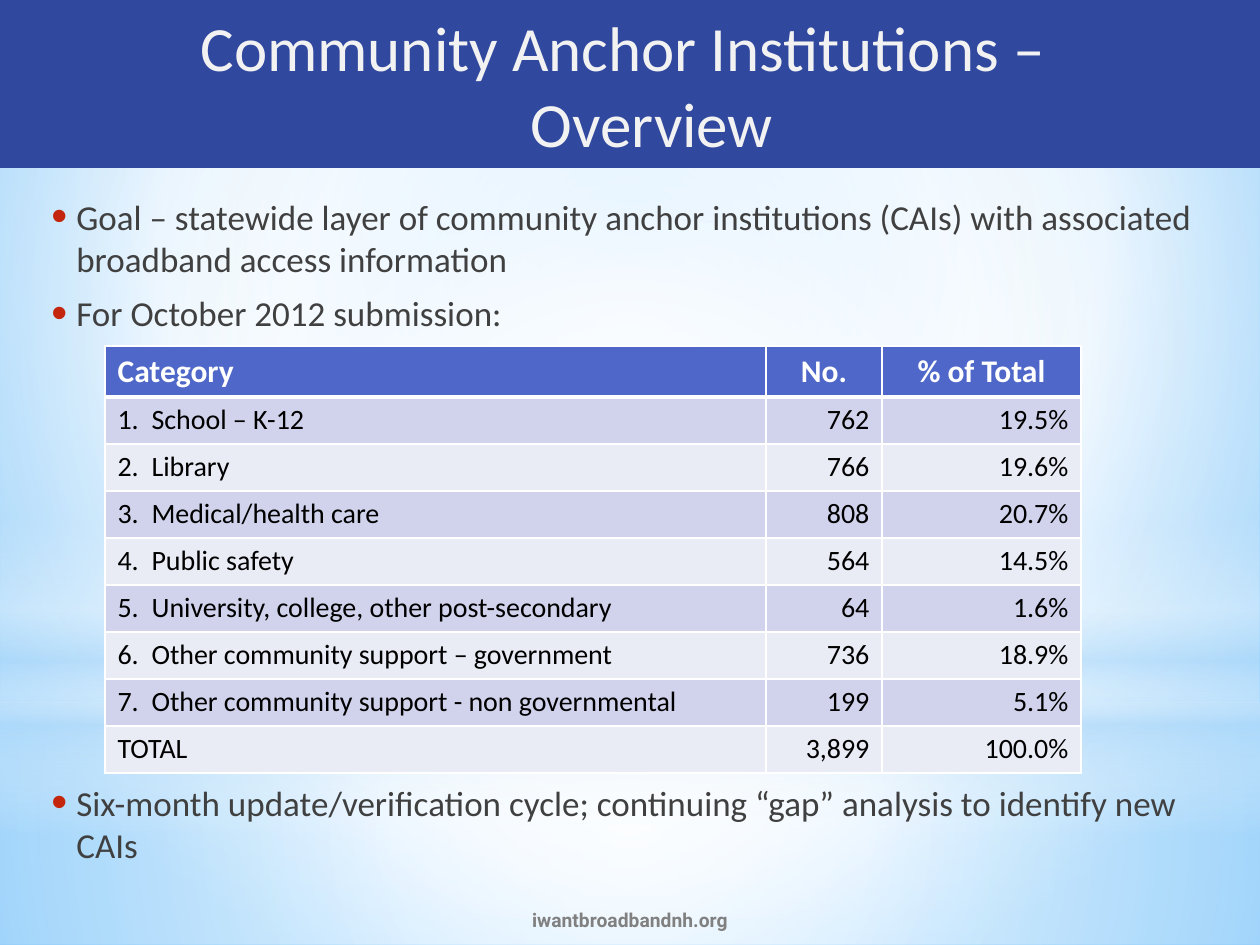
from dataclasses import dataclass

import pptx
import pptx.dml.color
import pptx.enum.shapes
import pptx.enum.text
import pptx.oxml
import pptx.oxml.ns
import pptx.util

ALIGN = pptx.enum.text.PP_ALIGN
ANCHOR = pptx.enum.text.MSO_ANCHOR
SHAPE = pptx.enum.shapes.MSO_SHAPE
PX_PER_INCH = 126
WIDTH, HEIGHT = 1260, 945
HORIZON = 703
CENTER = (50, 50, 50, 50)


@dataclass(frozen=True)
class Theme:
    font: str = "Calibri"
    footer_font: str = "Roboto"
    title_size: int = 36
    body_size: int = 20
    header_size: int = 18
    cell_size: int = 16
    footer_size: int = 11
    banner: str = "31489F"
    title: str = "F2F2F2"
    body: str = "404040"
    bullet: str = "C3260C"
    header: str = "4E67C8"
    odd_row: str = "D0D3EB"
    even_row: str = "E9EBF5"
    cell_text: str = "000000"
    footer: str = "808080"
    white: str = "FFFFFF"
    haze: str = "B4DCFA"
    sky_top: str = "9ED5FF"
    sky_edge: str = "5BB9FF"


THEME = Theme()

CATEGORIES = [
    ("1.\tSchool – K-12", "762", "19.5%"),
    ("2.\tLibrary", "766", "19.6%"),
    ("3.\tMedical/health care", "808", "20.7%"),
    ("4.\tPublic safety", "564", "14.5%"),
    ("5.\tUniversity, college, other post-secondary", "64", "1.6%"),
    ("6.\tOther community support – government", "736", "18.9%"),
    ("7.\tOther community support - non governmental", "199", "5.1%"),
    ("TOTAL", "3,899", "100.0%"),
]


def px(length):
    return pptx.util.Emu(round(length * 914400 / PX_PER_INCH))


def rgb(color):
    return pptx.dml.color.RGBColor.from_string(color)


def element(xml):
    tag, rest = xml.split(" ", 1)
    return pptx.oxml.parse_xml(f"<{tag} {pptx.oxml.ns.nsdecls('a')} {rest}")


def set_gradient(fill, properties, stops, focus=None):
    fill.solid()
    stop_xml = "".join(
        f'<a:gs pos="{position * 1000}"><a:srgbClr val="{color}">'
        f'<a:alpha val="{opacity * 1000}"/></a:srgbClr></a:gs>'
        for position, color, opacity in stops
    )
    if focus:
        sides = " ".join(f'{side}="{value * 1000}"' for side, value in zip("ltrb", focus))
        direction = f'<a:path path="circle"><a:fillToRect {sides}/></a:path>'
    else:
        direction = '<a:lin ang="5400000" scaled="0"/>'
    gradient = element(
        f'<a:gradFill rotWithShape="1"><a:gsLst>{stop_xml}</a:gsLst>{direction}</a:gradFill>'.replace(
            "<a:gradFill", "a:gradFill", 1)
    )
    solid = properties.find(pptx.oxml.ns.qn("a:solidFill"))
    properties.replace(solid, gradient)


def add_panel(slide, kind, box):
    panel = slide.shapes.add_shape(kind, *map(px, box))
    panel.shadow.inherit = False
    panel.line.fill.background()
    return panel


def add_glow(slide, kind, box, stops, focus=None):
    glow = add_panel(slide, kind, box)
    set_gradient(glow.fill, glow.element.spPr, stops, focus)


def write_text(frame, text, *, size, color, font=THEME.font, bold=False, align=ALIGN.LEFT,
               indent=(0, 0), bullet=False, before=0, after=0, new=False):
    paragraph = frame.add_paragraph() if new else frame.paragraphs[0]
    paragraph.text = text
    properties = paragraph._p.get_or_add_pPr()
    properties.set("marL", str(px(indent[0])))
    properties.set("indent", str(px(indent[1])))
    if bullet:
        for xml in (f'a:buClr ><a:srgbClr val="{THEME.bullet}"/></a:buClr>',
                    'a:buSzPct val="130000"/>',
                    'a:buFont typeface="Arial"/>',
                    'a:buChar char="•"/>'):
            properties.append(element(xml))
    paragraph.alignment = align
    paragraph.space_before = pptx.util.Pt(before)
    paragraph.space_after = pptx.util.Pt(after)
    for run in paragraph.runs:
        run.font.name = font
        run.font.size = pptx.util.Pt(size)
        run.font.bold = bold
        run.font.color.rgb = rgb(color)


def add_text_frame(slide, box, anchor=ANCHOR.TOP):
    frame = slide.shapes.add_textbox(*map(px, box)).text_frame
    frame.word_wrap = True
    frame.vertical_anchor = anchor
    return frame


def add_bullets(slide, box, lines):
    frame = add_text_frame(slide, box)
    for index, line in enumerate(lines):
        write_text(frame, line, size=THEME.body_size, color=THEME.body, indent=(32, -25),
                   bullet=True, before=4 if index else 0, after=3, new=index > 0)


def style_cell(cell, fill, bottom_width):
    properties = cell._tc.get_or_add_tcPr()
    for side, width in zip("LRTB", (1, 1, 1, bottom_width)):
        properties.append(element(
            f'a:ln{side} w="{pptx.util.Pt(width)}"><a:solidFill>'
            f'<a:srgbClr val="{THEME.white}"/></a:solidFill></a:ln{side}>'))
    cell.fill.solid()
    cell.fill.fore_color.rgb = rgb(fill)


def add_category_table(slide, left, top, widths, header_height, row_height):
    rows = [("Category", "No.", "% of Total"), *CATEGORIES]
    heights = [header_height] + [row_height] * len(CATEGORIES)
    table = slide.shapes.add_table(len(rows), len(widths), px(left), px(top),
                                   px(sum(widths)), px(sum(heights))).table
    for column, width in zip(table.columns, widths):
        column.width = px(width)
    for r, (values, height) in enumerate(zip(rows, heights)):
        table.rows[r].height = px(height)
        header = r == 0
        fill = THEME.header if header else (THEME.even_row, THEME.odd_row)[r % 2]
        value_align = ALIGN.CENTER if header else ALIGN.RIGHT
        for c, value in enumerate(values):
            cell = table.cell(r, c)
            style_cell(cell, fill, 3 if header else 1)
            write_text(cell.text_frame, value, bold=header,
                       size=THEME.header_size if header else THEME.cell_size,
                       color=THEME.white if header else THEME.cell_text,
                       align=value_align if c else ALIGN.LEFT,
                       indent=(34, -34) if "\t" in value else (0, 0))


def add_backdrop(slide):
    white, haze = THEME.white, THEME.haze
    background = slide.background
    background.fill.solid()
    set_gradient(background.fill, slide.element.cSld.bg.bgPr,
                 [(0, THEME.sky_top, 100), (60, white, 100), (100, THEME.sky_edge, 100)],
                 (20, 10, 20, 60))
    add_glow(slide, SHAPE.RECTANGLE, (0, HORIZON, WIDTH, HEIGHT - HORIZON),
             [(0, white, 91), (37, white, 76), (100, haze, 79)], CENTER)
    add_glow(slide, SHAPE.RECTANGLE, (0, 0, WIDTH, HORIZON),
             [(0, white, 89), (48, white, 62), (100, haze, 79)], CENTER)
    add_glow(slide, SHAPE.RECTANGLE, (0, 519, WIDTH, 315),
             [(0, white, 0), (29, white, 30), (45, haze, 40),
              (55, white, 26), (65, haze, 60), (100, white, 0)])
    add_glow(slide, SHAPE.OVAL, (0, 220, WIDTH, HORIZON),
             [(0, white, 100), (56, white, 0)], CENTER)


def add_title(slide, text):
    banner = add_panel(slide, SHAPE.RECTANGLE, (0, 0, WIDTH, 168))
    banner.fill.solid()
    banner.fill.fore_color.rgb = rgb(THEME.banner)
    banner.text_frame.vertical_anchor = ANCHOR.MIDDLE
    write_text(banner.text_frame, text, size=THEME.title_size, color=THEME.title,
               align=ALIGN.CENTER, indent=(44, -44))


def main():
    presentation = pptx.Presentation()
    presentation.slide_width, presentation.slide_height = px(WIDTH), px(HEIGHT)
    slide = presentation.slides.add_slide(presentation.slide_layouts[6])
    add_backdrop(slide)
    add_title(slide, "Community Anchor Institutions – \vOverview")
    add_bullets(slide, (32, 189, 1207, 150), [
        "Goal – statewide layer of community anchor institutions (CAIs) with associated "
        "broadband access information",
        "For October 2012 submission:",
    ])
    add_category_table(slide, 105, 346, (661, 116, 199), 51, 47)
    add_bullets(slide, (32, 775, 1207, 100), [
        "Six-month update/verification cycle; continuing “gap” analysis to identify new CAIs",
    ])
    footer = add_text_frame(slide, (399, 895, 462, 50), ANCHOR.MIDDLE)
    write_text(footer, "iwantbroadbandnh.org", size=THEME.footer_size, color=THEME.footer,
               font=THEME.footer_font, bold=True, align=ALIGN.CENTER)
    presentation.save("out.pptx")


if __name__ == "__main__":
    main()
